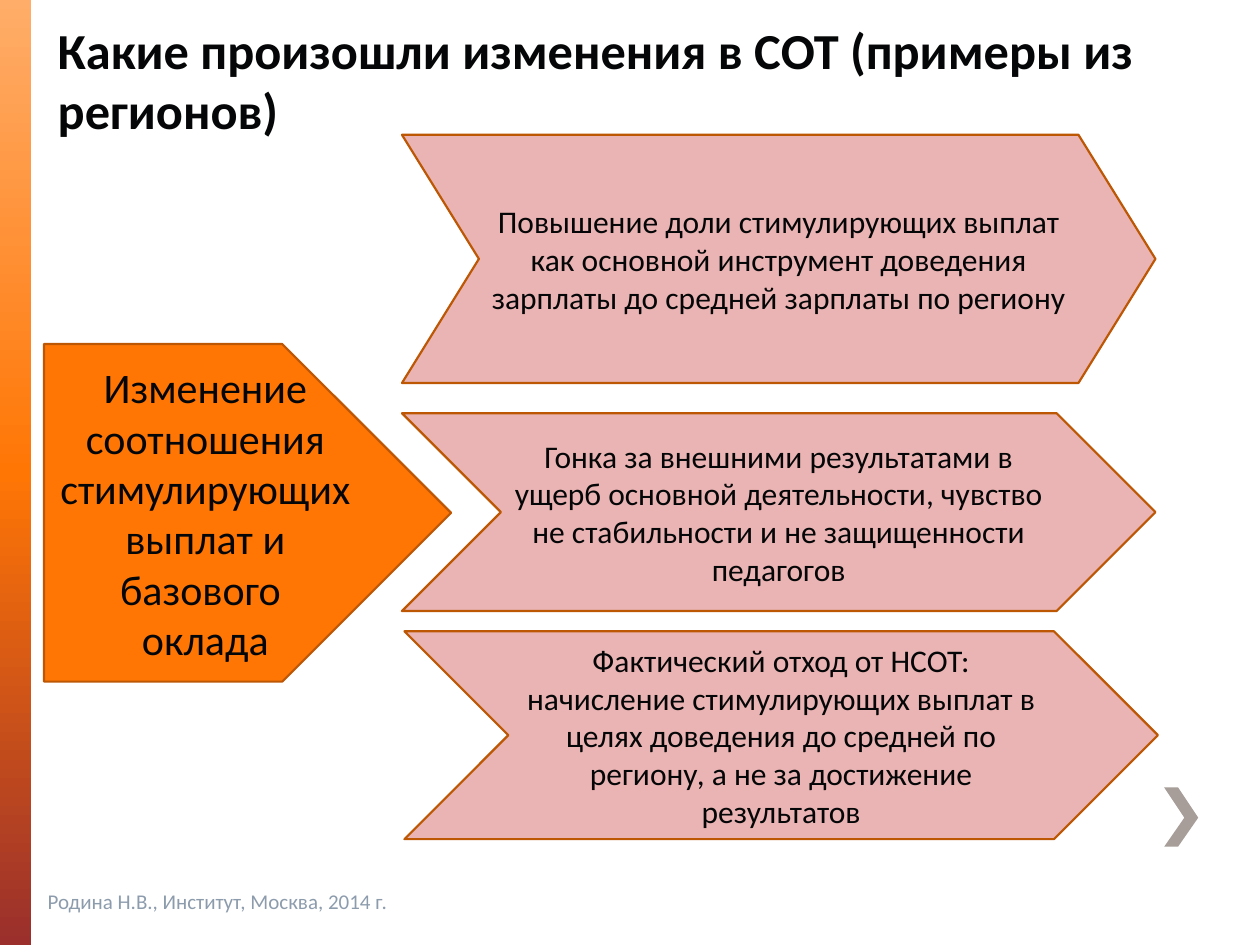
from copy import deepcopy
from dataclasses import dataclass

from pptx import Presentation
from pptx.dml.color import RGBColor
from pptx.enum import shapes, text
from pptx.util import Inches, Pt

COLORS = {
    "ink": "050607", "footer": "8D9CAD", "outline": "BD5704",
    "orange": "FF7605", "pink": "E9B4B3", "marker": "A79D99",
    "bar_top": "FFAD69", "bar_bottom": "9A2F2C",
}
FONT = "Calibri"


@dataclass
class Arrow:
    kind: shapes.MSO_SHAPE
    box: tuple[float, float, float, float]
    fill: str
    size: float
    lines: list[str]
    point: float = 0.5


ARROWS = [
    Arrow(shapes.MSO_SHAPE.PENTAGON, (0.35, 2.73, 3.23, 2.68), "orange", 24,
          ["Изменение соотношения стимулирующих выплат и базового ", "оклада"]),
    Arrow(shapes.MSO_SHAPE.CHEVRON, (3.19, 1.07, 5.98, 1.97), "pink", 18,
          ["Повышение доли стимулирующих выплат как основной инструмент "
           "доведения зарплаты до средней зарплаты по региону"], 0.31),
    Arrow(shapes.MSO_SHAPE.CHEVRON, (3.19, 3.28, 5.98, 1.57), "pink", 18,
          ["Гонка за внешними результатами в ущерб основной деятельности, "
           "чувство не стабильности и не защищенности педагогов"]),
    Arrow(shapes.MSO_SHAPE.CHEVRON, (3.21, 5.01, 5.98, 1.65), "pink", 18,
          ["Фактический отход от НСОТ: начисление стимулирующих выплат в целях "
           "доведения до средней по региону, а не за достижение результатов"]),
]


def rgb(name: str) -> RGBColor:
    return RGBColor.from_string(COLORS[name])


def write(sp, lines: list[str], *, size: float, color: str = "ink", bold: bool = False,
          align=text.PP_ALIGN.LEFT, anchor=text.MSO_ANCHOR.MIDDLE) -> None:
    tf = sp.text_frame
    tf.word_wrap = True
    tf.vertical_anchor = anchor
    for i, line in enumerate(lines):
        p = tf.paragraphs[0] if i == 0 else tf.add_paragraph()
        p.alignment = align
        r = p.add_run()
        r.text = line
        r.font.name, r.font.size, r.font.bold = FONT, Pt(size), bold
        r.font.color.rgb = rgb(color)


def add_text(s, box: tuple, line: str, **fmt) -> None:
    write(s.shapes.add_textbox(*map(Inches, box)), [line], **fmt)


def add_side_bar(s) -> None:
    sp = s.shapes.add_shape(shapes.MSO_SHAPE.RECTANGLE, 0, 0, Inches(0.25), Inches(7.5))
    sp.shadow.inherit = False
    sp.line.fill.background()
    sp.fill.gradient()
    sp.fill.gradient_angle = 270
    first = sp.fill.gradient_stops[0]._gs
    first.addnext(deepcopy(first))
    stops = [(0, "bar_top"), (0.5, "orange"), (1, "bar_bottom")]
    for stop, (position, color) in zip(sp.fill.gradient_stops, stops):
        stop.position = position
        stop.color.rgb = rgb(color)


def add_marker(s) -> None:
    """Draw the small grey angle in the lower right corner."""
    points = [(9.35, 6.25), (9.24, 6.25), (9.4, 6.49), (9.24, 6.72), (9.35, 6.72), (9.51, 6.49)]
    start, *rest = [(Inches(x), Inches(y)) for x, y in points]
    builder = s.shapes.build_freeform(*start)
    builder.add_line_segments(rest, close=True)
    sp = builder.convert_to_shape()
    sp.shadow.inherit = False
    sp.fill.solid()
    sp.fill.fore_color.rgb = rgb("marker")
    sp.line.fill.background()


def add_arrow(s, arrow: Arrow) -> None:
    sp = s.shapes.add_shape(arrow.kind, *map(Inches, arrow.box))
    sp.adjustments[0] = arrow.point
    sp.shadow.inherit = False
    sp.fill.solid()
    sp.fill.fore_color.rgb = rgb(arrow.fill)
    sp.line.color.rgb = rgb("outline")
    sp.line.width = Pt(1.25)
    write(sp, arrow.lines, size=arrow.size, align=text.PP_ALIGN.CENTER)


def main() -> None:
    prs = Presentation()
    prs.slide_width, prs.slide_height = Inches(10), Inches(7.5)
    s = prs.slides.add_slide(prs.slide_layouts[6])
    add_side_bar(s)
    add_marker(s)
    for arrow in ARROWS:
        add_arrow(s, arrow)
    add_text(s, (0.28, 6.95, 4.49, 0.4), "Родина Н.В., Институт, Москва, 2014 г.",
             size=12, color="footer")
    add_text(s, (0.36, 0.29, 9.29, 0.87), "Какие произошли изменения в СОТ (примеры из регионов)",
             size=28.8, bold=True, anchor=text.MSO_ANCHOR.BOTTOM)
    prs.save("out.pptx")


if __name__ == "__main__":
    main()
